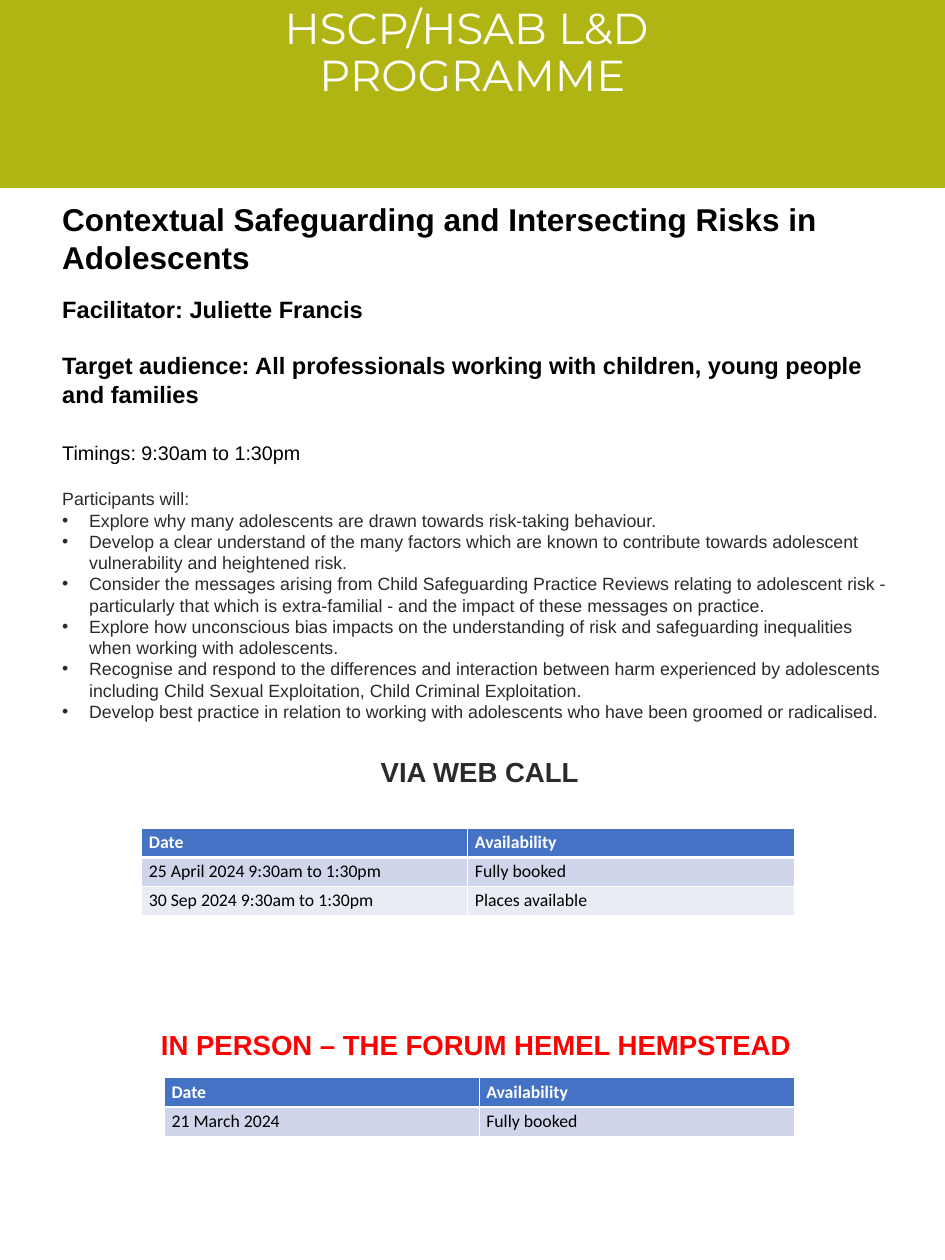
from lxml import etree
from pptx import Presentation
from pptx.dml.color import RGBColor
from pptx.enum import shapes, text
from pptx.oxml import ns
from pptx.util import Inches, Pt

COLORS = {
    "olive": "B1B514", "white": "FFFFFF", "black": "000000", "grey": "2A2A2A",
    "red": "FF0000", "header": "4472C4", "band": "CFD5EA", "light": "E9EBF5",
}


def add_text(frame, content, size, color="black", font="Arial", bold=False,
             align=text.PP_ALIGN.LEFT, before=0, spacing=None, bullet=False):
    """Fill the empty first paragraph of the frame, or add another one."""
    para = frame.paragraphs[0]
    if para.runs:
        para = frame.add_paragraph()
    if bullet:
        props = para._p.get_or_add_pPr()
        props.set("marL", str(Inches(0.38)))
        props.set("indent", str(-Inches(0.38)))
        etree.SubElement(props, ns.qn("a:buFont"), typeface="Arial")
        etree.SubElement(props, ns.qn("a:buChar"), char="•")
    para.alignment = align
    if before:
        para.space_before = Pt(before)
    if spacing:
        para.line_spacing = spacing
    for number, line in enumerate(content.split("\n")):
        if number:
            para.add_line_break()
        span = para.add_run()
        span.text = line
        span.font.size = Pt(size)
        span.font.name = font
        span.font.bold = bold
        span.font.color.rgb = RGBColor.from_string(COLORS[color])


def add_dates(page, left, top, column_width, rows):
    """Add a table of dates with a header row and white borders."""
    row_height = Inches(0.41)
    table = page.shapes.add_table(
        len(rows), 2, Inches(left), Inches(top),
        Inches(column_width * 2), row_height * len(rows)).table
    for column in table.columns:
        column.width = Inches(column_width)
    for r, row in enumerate(rows):
        table.rows[r].height = row_height
        for c, content in enumerate(row):
            cell = table.cell(r, c)
            header = r == 0
            props = cell._tc.get_or_add_tcPr()
            for side in "LRTB":
                width = 3 if header and side == "B" else 1
                border = etree.SubElement(props, ns.qn("a:ln" + side), w=str(Pt(width)))
                fill = etree.SubElement(border, ns.qn("a:solidFill"))
                etree.SubElement(fill, ns.qn("a:srgbClr"), val=COLORS["white"])
            shade = "header" if header else ("light", "band")[r % 2]
            cell.fill.solid()
            cell.fill.fore_color.rgb = RGBColor.from_string(COLORS[shade])
            add_text(cell.text_frame, content, 18, "white" if header else "black",
                     font="Calibri", bold=header)


deck = Presentation()
deck.slide_width, deck.slide_height = Inches(13.33), Inches(17.78)
page = deck.slides.add_slide(deck.slide_layouts[6])

# Banner and programme title
banner = page.shapes.add_shape(shapes.MSO_SHAPE.RECTANGLE, 0, 0, deck.slide_width, Inches(2.64))
banner.shadow.inherit = False
banner.fill.solid()
banner.fill.fore_color.rgb = RGBColor.from_string(COLORS["olive"])
banner.line.color.rgb = RGBColor.from_string(COLORS["olive"])
banner.line.width = Pt(1)

title = page.shapes.add_textbox(0, Inches(0.05), deck.slide_width, Inches(2.26)).text_frame
title.word_wrap = True
add_text(title, "HSCP/HSAB L&D \nPROGRAMME", 44, "white", font="Montserrat",
         align=text.PP_ALIGN.CENTER, spacing=0.9)

# Course details
details = page.shapes.add_textbox(Inches(0.78), Inches(2.78), Inches(11.97), Inches(13.77)).text_frame
details.word_wrap = True
add_text(details, "Contextual Safeguarding and Intersecting Risks in Adolescents", 32, bold=True)
add_text(details, "Facilitator: Juliette Francis", 24, bold=True, before=19)
add_text(details, "Target audience: All professionals working with children, young people and families",
         24, bold=True, before=28.5)
add_text(details, "Timings: 9:30am to 1:30pm", 20, before=33.5)
add_text(details, "Participants will:", 18, "grey", before=24)
outcomes = [
    "Explore why many adolescents are drawn towards risk-taking behaviour.",
    "Develop a clear understand of the many factors which are known to contribute towards "
    "adolescent vulnerability and heightened risk.",
    "Consider the messages arising from Child Safeguarding Practice Reviews relating to adolescent "
    "risk - particularly that which is extra-familial - and the impact of these messages on practice.",
    "Explore how unconscious bias impacts on the understanding of risk and safeguarding "
    "inequalities when working with adolescents.",
    "Recognise and respond to the differences and interaction between harm experienced by "
    "adolescents including Child Sexual Exploitation, Child Criminal Exploitation.",
    "Develop best practice in relation to working with adolescents who have been groomed or radicalised.",
]
for outcome in outcomes:
    add_text(details, outcome, 18, "grey", bullet=True)
add_text(details, "VIA WEB CALL", 28, "grey", bold=True, align=text.PP_ALIGN.CENTER, before=33.5)
add_text(details, "IN PERSON – THE FORUM HEMEL HEMPSTEAD ", 28, "red", bold=True,
         align=text.PP_ALIGN.CENTER, before=244)

# Dates
heading = ("Date", "Availability")
add_dates(page, 2, 11.69, 4.6, [
    heading,
    ("25 April 2024 9:30am to 1:30pm", "Fully booked"),
    ("30 Sep 2024 9:30am to 1:30pm", "Places available"),
])
add_dates(page, 2.32, 15.21, 4.44, [heading, ("21 March 2024", "Fully booked")])

deck.save("out.pptx")
